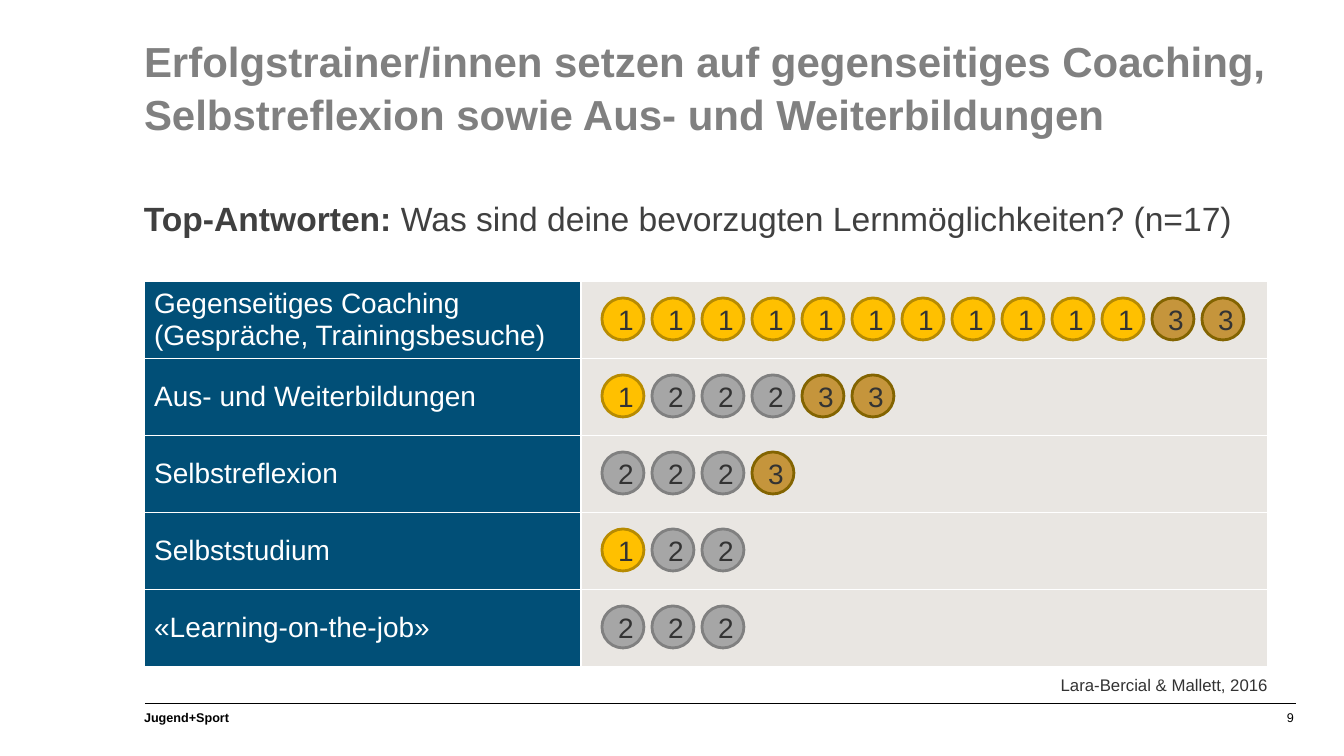
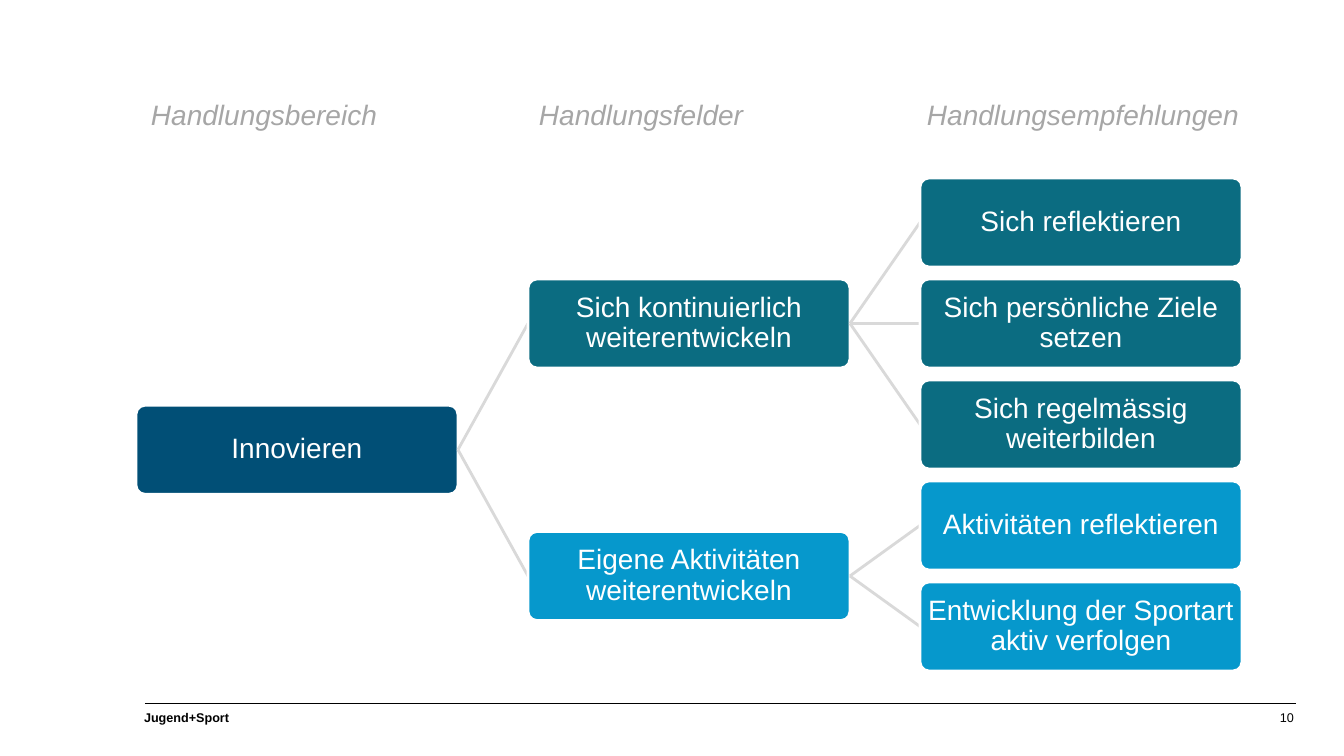
from lxml import etree
from pptx import Presentation
from pptx.dml.color import RGBColor
from pptx.enum.shapes import MSO_CONNECTOR, MSO_SHAPE
from pptx.enum.text import MSO_ANCHOR, PP_ALIGN
from pptx.oxml.ns import qn
from pptx.util import Emu, Pt

STRAIGHT = MSO_CONNECTOR.STRAIGHT
ELLIPSE, ROUNDED = MSO_SHAPE.OVAL, MSO_SHAPE.ROUNDED_RECTANGLE
TOP, MIDDLE = MSO_ANCHOR.TOP, MSO_ANCHOR.MIDDLE
LEFT, CENTER, RIGHT = PP_ALIGN.LEFT, PP_ALIGN.CENTER, PP_ALIGN.RIGHT

SLIDE_W, SLIDE_H = 1344, 756
EMU_PER_PX = 12192000 / SLIDE_W
FONT = "Arial"
COLORS = {
    "black": "000000", "white": "FFFFFF", "title": "808080",
    "question": "404040", "text": "333333", "heading": "A6A6A6",
    "label": "014F77", "answers": "E9E6E2", "link": "D9D9D9",
    "root": "014F76", "teal": "0B6C81", "blue": "0698CC",
    "gold": "FFC000", "gold_edge": "B78B01",
    "silver": "A6A6A6", "silver_edge": "808080",
    "bronze": "C5953C", "bronze_edge": "836401",
}
MEDALS = {"1": "gold", "2": "silver", "3": "bronze"}

CONTENT_X = 144
TABLE_Y, ROW_H = 281, 77
LABEL_W, ANSWERS_W = 437, 687
MEDAL_X, MEDAL_PITCH, MEDAL_SIZE = 602, 50, 42
ANSWERS = [
    ("Gegenseitiges Coaching (Gespräche, Trainingsbesuche)", "1111111111133"),
    ("Aus- und Weiterbildungen", "122233"),
    ("Selbstreflexion", "2223"),
    ("Selbststudium", "122"),
    ("«Learning-on-the-job»", "222"),
]

TREE_X, TREE_Y = 136, 178
NODE_W, NODE_H = 322, 89
COLUMN_PITCH, LEAF_PITCH = 392, 101
HEADING_X, HEADING_PITCH = 151, 388
HEADINGS = ["Handlungsbereich", "Handlungsfelder", "Handlungsempfehlungen"]
TREE = ("Innovieren", "root", [
    ("Sich kontinuierlich weiterentwickeln", "teal", [
        ("Sich reflektieren", "teal", []),
        ("Sich persönliche Ziele setzen", "teal", []),
        ("Sich regelmässig weiterbilden", "teal", []),
    ]),
    ("Eigene Aktivitäten weiterentwickeln", "blue", [
        ("Aktivitäten reflektieren", "blue", []),
        ("Entwicklung der Sportart aktiv verfolgen", "blue", []),
    ]),
])


def px(length):
    return Emu(round(length * EMU_PER_PX))


def rgb(name):
    return RGBColor.from_string(COLORS[name])


def write_text(frame, text, size, color, bold_lead="", bold=False,
               italic=False, align=LEFT, spacing=1.05):
    """Fill the first paragraph; bold_lead is set in bold before the text."""
    para = frame.paragraphs[0]
    para.alignment = align
    para.line_spacing = spacing
    for words, is_bold in ((bold_lead, True), (text, bold)):
        if words:
            span = para.add_run()
            span.text = words
            font = span.font
            font.name, font.size = FONT, Pt(size)
            font.bold, font.italic = is_bold, italic
            font.color.rgb = rgb(color)


def set_frame(frame, inset_x, inset_y, anchor):
    frame.word_wrap = True
    frame.vertical_anchor = anchor
    frame.margin_left = frame.margin_right = px(inset_x)
    frame.margin_top = frame.margin_bottom = px(inset_y)


def add_text(slide, x, y, w, h, text, **style):
    box = slide.shapes.add_textbox(px(x), px(y), px(w), px(h))
    set_frame(box.text_frame, 0, 0, TOP)
    write_text(box.text_frame, text, **style)


def add_shape(slide, kind, x, y, w, h, fill, edge):
    shape = slide.shapes.add_shape(kind, px(x), px(y), px(w), px(h))
    shape.shadow.inherit = False
    shape.fill.solid()
    shape.fill.fore_color.rgb = rgb(fill)
    shape.line.color.rgb = rgb(edge)
    shape.line.width = Pt(2)
    return shape


def add_line(slide, x1, y1, x2, y2, color, width):
    line = slide.shapes.add_connector(STRAIGHT, px(x1), px(y1), px(x2), px(y2))
    line.line.color.rgb = rgb(color)
    line.line.width = Pt(width)
    etree.SubElement(line.element.spPr, qn("a:effectLst"))
    return line


def add_slide(deck, number):
    """Add a blank slide with the shared footer."""
    slide = deck.slides.add_slide(deck.slide_layouts[6])
    add_line(slide, 145, 704, 1296, 704, "black", 0.75)
    add_text(slide, CONTENT_X, 709, 560, 16, "Jugend+Sport",
             size=9, color="black", bold=True)
    add_text(slide, 970, 709, 324, 16, str(number),
             size=9, color="black", align=RIGHT)
    return slide


def set_cell(cell, fill):
    """Give the cell its fill and thin white borders."""
    properties = cell._tc.get_or_add_tcPr()
    for side in ("lnL", "lnR", "lnT", "lnB"):
        border = etree.SubElement(properties, qn(f"a:{side}"), w=str(Pt(1)))
        solid = etree.SubElement(border, qn("a:solidFill"))
        etree.SubElement(solid, qn("a:srgbClr"), val=COLORS["white"])
    cell.fill.solid()
    cell.fill.fore_color.rgb = rgb(fill)
    cell.vertical_anchor = MIDDLE


def add_answer_table(slide):
    table = slide.shapes.add_table(
        len(ANSWERS), 2, px(CONTENT_X), px(TABLE_Y),
        px(LABEL_W + ANSWERS_W), px(ROW_H * len(ANSWERS))).table
    table.first_row = table.horz_banding = False
    table.columns[0].width = px(LABEL_W)
    table.columns[1].width = px(ANSWERS_W)
    for index, (label, _) in enumerate(ANSWERS):
        table.rows[index].height = px(ROW_H)
        label_cell = table.cell(index, 0)
        set_cell(label_cell, "label")
        set_cell(table.cell(index, 1), "answers")
        write_text(label_cell.text_frame, label, size=20, color="white",
                   spacing=1.0)


def add_medal(slide, x, y, rank):
    metal = MEDALS[rank]
    medal = add_shape(slide, ELLIPSE, x, y, MEDAL_SIZE, MEDAL_SIZE,
                      metal, f"{metal}_edge")
    set_frame(medal.text_frame, 10, 5, MIDDLE)
    write_text(medal.text_frame, rank, size=20, color="text", align=CENTER)


def add_node(slide, text, fill, x, y):
    node = add_shape(slide, ROUNDED, x, y, NODE_W, NODE_H, fill, "white")
    node.adjustments[0] = 0.1
    set_frame(node.text_frame, 1, 1, MIDDLE)
    write_text(node.text_frame, text, size=20, color="white", align=CENTER,
               spacing=0.9)
    return node


def place_tree(node, leaf=0, level=0):
    """Return the placed node and the next free leaf row.

    A parent stands midway between its first and last child.
    """
    text, fill, children = node
    placed = []
    for child in children:
        branch, leaf = place_tree(child, leaf, level + 1)
        placed.append(branch)
    if placed:
        y = (placed[0]["y"] + placed[-1]["y"]) / 2
    else:
        y = TREE_Y + leaf * LEAF_PITCH
        leaf += 1
    x = TREE_X + level * COLUMN_PITCH
    return {"text": text, "fill": fill, "x": x, "y": y,
            "children": placed}, leaf


def draw_tree(slide, branch, parent=None):
    """Draw each link before its child, so the child's border covers its end."""
    link = add_line(slide, 0, 0, 0, 0, "link", 2) if parent else None
    node = add_node(slide, branch["text"], branch["fill"],
                    branch["x"], branch["y"])
    if link:
        link.begin_connect(parent, 3)
        link.end_connect(node, 1)
    for child in branch["children"]:
        draw_tree(slide, child, node)


def build_answers(deck):
    slide = add_slide(deck, 9)
    add_text(slide, CONTENT_X, 33, 1151, 105,
             "Erfolgstrainer/innen setzen auf gegenseitiges Coaching, "
             "Selbstreflexion sowie Aus- und Weiterbildungen",
             size=30, color="title", bold=True)
    add_text(slide, CONTENT_X, 196, 1130, 41,
             "Was sind deine bevorzugten Lernmöglichkeiten? (n=17)",
             bold_lead="Top-Antworten: ", size=24, color="question")
    add_answer_table(slide)
    for row, (_, ranks) in enumerate(ANSWERS):
        for column, rank in enumerate(ranks):
            add_medal(slide, MEDAL_X + column * MEDAL_PITCH,
                      TABLE_Y + 17 + row * ROW_H, rank)
    add_text(slide, 1049, 674, 219, 20, "Lara-Bercial & Mallett, 2016",
             size=12, color="text", align=RIGHT)


def build_tree(deck):
    slide = add_slide(deck, 10)
    for column, heading in enumerate(HEADINGS):
        add_text(slide, HEADING_X + column * HEADING_PITCH, 96, 340, 34,
                 heading, size=20, color="heading", italic=True)
    root, _ = place_tree(TREE)
    draw_tree(slide, root)


def main():
    deck = Presentation()
    deck.slide_width, deck.slide_height = px(SLIDE_W), px(SLIDE_H)
    build_answers(deck)
    build_tree(deck)
    deck.save("out.pptx")


if __name__ == "__main__":
    main()
